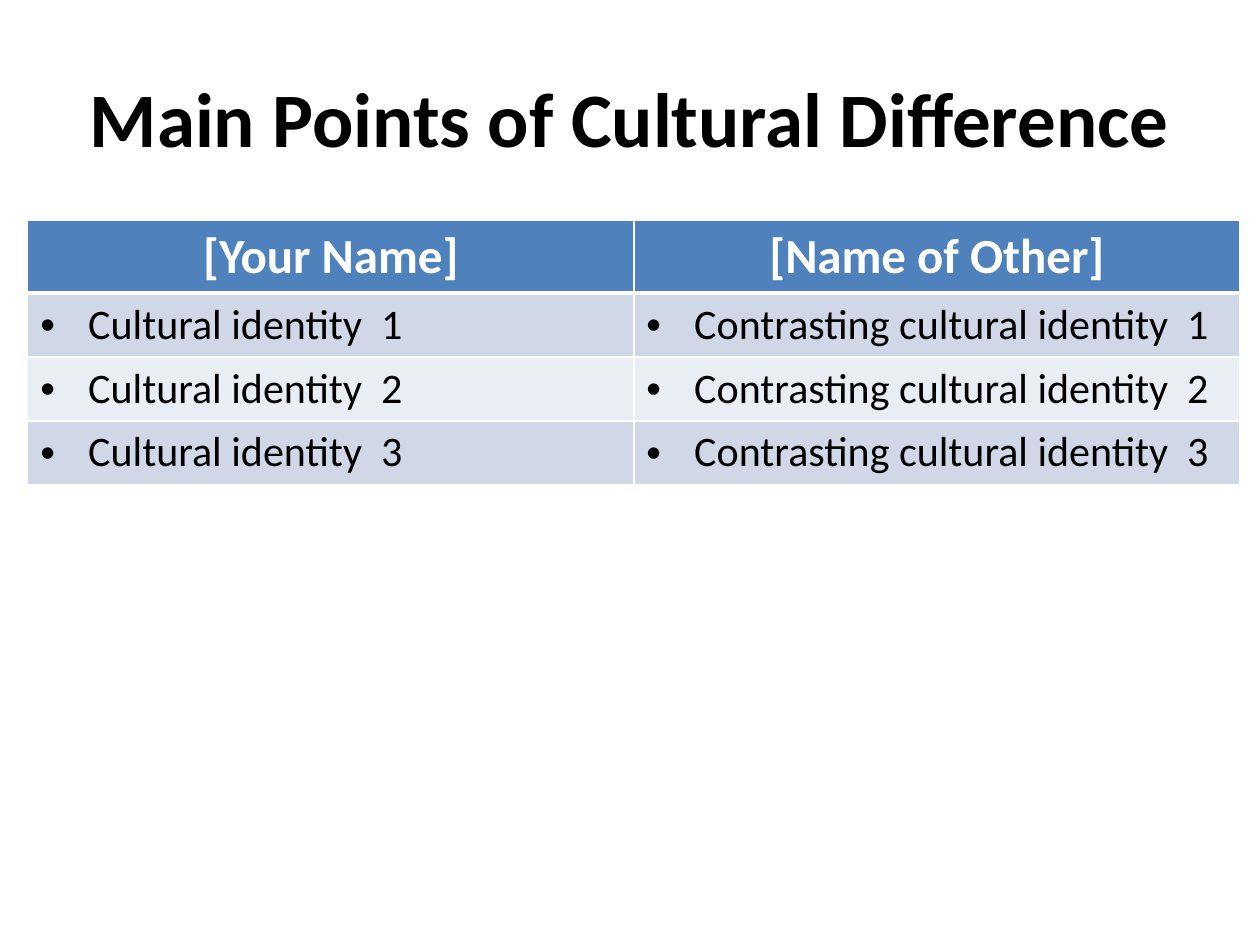
from dataclasses import dataclass

from lxml.etree import SubElement
from pptx import Presentation
from pptx.dml.color import RGBColor
from pptx.enum.text import MSO_ANCHOR as Anchor, PP_ALIGN as Align
from pptx.oxml import parse_xml
from pptx.oxml.ns import nsdecls, qn
from pptx.util import Inches, Pt


@dataclass(frozen=True)
class Theme:
    font: str = "Calibri"
    text: str = "000000"
    header_text: str = "FFFFFF"
    header_fill: str = "4F81BD"
    bands: tuple = ("D0D8E8", "E9EDF4")
    border: str = "FFFFFF"
    thin: float = 1
    thick: float = 3
    title_size: int = 44
    header_size: int = 28
    body_size: int = 24


THEME = Theme()
TITLE = "Main Points of Cultural Difference"
HEADERS = ("[Your Name]", "[Name of Other]")
ROW_LABELS = ("Cultural identity", "Contrasting cultural identity")
POINT_COUNT = 3


def write_text(paragraph, text, size, color, bold, alignment):
    paragraph.alignment = alignment
    run = paragraph.add_run()
    run.text = text
    formats = {"name": THEME.font, "size": Pt(size), "bold": bold}
    for name, value in formats.items():
        setattr(run.font, name, value)
    run.font.color.rgb = RGBColor.from_string(color)


def add_bullet(paragraph, indent):
    properties = paragraph._p.get_or_add_pPr()
    properties.set("marL", str(indent))
    properties.set("indent", str(-indent))
    SubElement(properties, qn("a:buFont")).set("typeface", "Arial")
    SubElement(properties, qn("a:buChar")).set("char", "•")


def set_borders(cell, top, bottom):
    properties = cell._tc.get_or_add_tcPr()
    widths = {"lnL": THEME.thin, "lnR": THEME.thin, "lnT": top, "lnB": bottom}
    for index, (side, width) in enumerate(widths.items()):
        line = parse_xml(
            f'<a:{side} {nsdecls("a")} w="{Pt(width)}"><a:solidFill>'
            f'<a:srgbClr val="{THEME.border}"/></a:solidFill></a:{side}>'
        )
        properties.insert(index, line)


def place_title(slide, left, top, width, height):
    title = slide.shapes.title
    box = {"left": left, "top": top, "width": width, "height": height}
    for name, value in box.items():
        setattr(title, name, value)
    title.text_frame.vertical_anchor = Anchor.MIDDLE
    write_text(title.text_frame.paragraphs[0], TITLE, THEME.title_size,
               THEME.text, True, Align.CENTER)


def fill_cell(cell, text, row):
    is_header = row == 0
    color = THEME.header_fill if is_header else THEME.bands[(row - 1) % 2]
    cell.fill.solid()
    cell.fill.fore_color.rgb = RGBColor.from_string(color)
    set_borders(cell, THEME.thick if row == 1 else THEME.thin,
                THEME.thick if is_header else THEME.thin)
    paragraph = cell.text_frame.paragraphs[0]
    if is_header:
        write_text(paragraph, text, THEME.header_size, THEME.header_text, True, Align.CENTER)
    else:
        write_text(paragraph, text, THEME.body_size, THEME.text, False, Align.LEFT)
        add_bullet(paragraph, Inches(0.38))


def place_comparison(slide, left, top, width, height):
    rows = [HEADERS]
    for number in range(1, POINT_COUNT + 1):
        rows.append([f"{label}  {number}" for label in ROW_LABELS])
    table = slide.shapes.add_table(len(rows), len(HEADERS), left, top, width, height).table
    header_height = Inches(0.57)
    for row, texts in enumerate(rows):
        body_height = (height - header_height) // POINT_COUNT
        table.rows[row].height = body_height if row else header_height
        for column, text in enumerate(texts):
            fill_cell(table.cell(row, column), text, row)


def main():
    presentation = Presentation()
    presentation.slide_width = Inches(10)
    presentation.slide_height = Inches(7.5)
    slide = presentation.slides.add_slide(presentation.slide_layouts[5])
    place_title(slide, Inches(0.5), Inches(0.3), Inches(9), Inches(1.25))
    place_comparison(slide, Inches(0.22), Inches(1.75), Inches(9.62), Inches(2.07))
    presentation.save("out.pptx")


if __name__ == "__main__":
    main()
